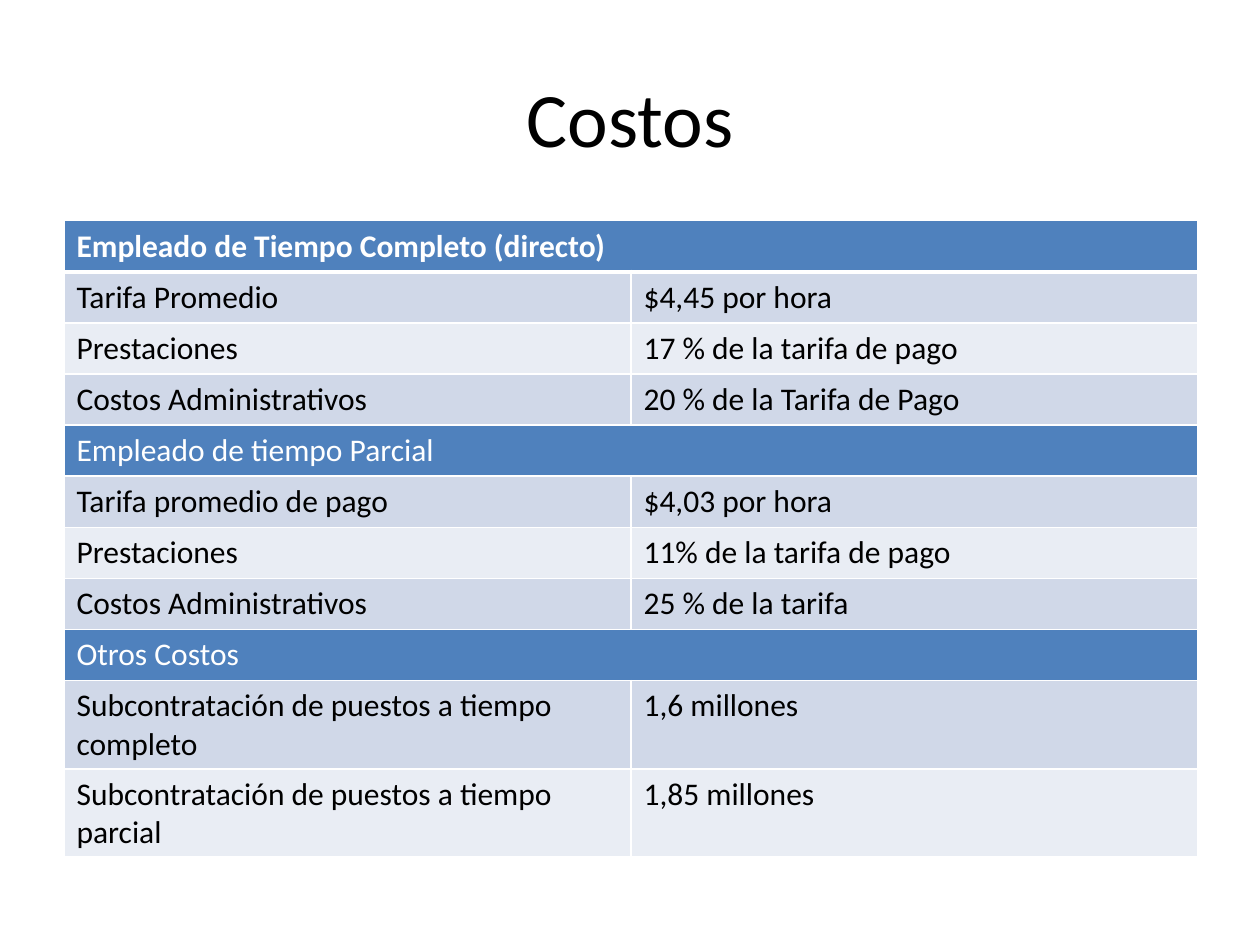
from dataclasses import dataclass

from lxml import etree
from pptx import Presentation
from pptx import util as u
from pptx.dml.color import RGBColor
from pptx.enum import text
from pptx.oxml import ns


@dataclass(frozen=True)
class Theme:
    font: str = "Calibri"
    title_size: int = 44
    cell_size: int = 18
    ink: str = "000000"
    paper: str = "FFFFFF"
    section: str = "4F81BD"
    bands: tuple = ("D0D8E8", "E9EDF4")
    rule: int = 1
    heavy_rule: int = 3


THEME = Theme()

# Each section: heading, then its rows
SECTIONS = [
    ("Empleado de Tiempo Completo (directo)", [
        ("Tarifa Promedio", "$4,45 por hora"),
        ("Prestaciones", "17 % de la tarifa de pago"),
        ("Costos Administrativos", "20 % de la Tarifa de Pago"),
    ]),
    ("Empleado de tiempo Parcial", [
        ("Tarifa promedio de pago", "$4,03 por hora"),
        ("Prestaciones", "11% de la tarifa de pago"),
        ("Costos Administrativos", "25 % de la tarifa"),
    ]),
    ("Otros Costos", [
        ("Subcontratación de puestos a tiempo completo", "1,6 millones"),
        ("Subcontratación de puestos a tiempo parcial", "1,85 millones"),
    ]),
]


def add_run(p, content, size, color, bold=False):
    r = p.add_run()
    r.text = content
    r.font.name = THEME.font
    r.font.size = u.Pt(size)
    r.font.bold = bold
    r.font.color.rgb = RGBColor.from_string(color)


def add_title(s, content):
    sp = s.shapes.add_textbox(u.Cm(1.27), u.Cm(0.76), u.Cm(22.86), u.Cm(3.18))
    tf = sp.text_frame
    tf.word_wrap = True
    tf.vertical_anchor = text.MSO_ANCHOR.MIDDLE
    p = tf.paragraphs[0]
    p.alignment = text.PP_ALIGN.CENTER
    add_run(p, content, THEME.title_size, THEME.ink)


def set_borders(cell, top, bottom):
    tc_pr = cell._tc.get_or_add_tcPr()
    widths = {"lnL": THEME.rule, "lnR": THEME.rule, "lnT": top, "lnB": bottom}
    for side, width in widths.items():
        ln = etree.SubElement(tc_pr, ns.qn(f"a:{side}"), w=str(u.Pt(width)))
        fill = etree.SubElement(ln, ns.qn("a:solidFill"))
        etree.SubElement(fill, ns.qn("a:srgbClr"), val=THEME.paper)


def style_cell(cell, row, fill):
    # The heavy rule lies between the first two rows
    set_borders(cell,
                top=THEME.heavy_rule if row == 1 else THEME.rule,
                bottom=THEME.heavy_rule if row == 0 else THEME.rule)
    cell.fill.solid()
    cell.fill.fore_color.rgb = RGBColor.from_string(fill)


def add_cost_table(s, sections):
    # Flatten the sections into (texts, fill, text colour)
    rows = []
    for heading, items in sections:
        rows.append(((heading,), THEME.section, THEME.paper))
        for i, item in enumerate(items):
            rows.append((item, THEME.bands[i % 2], THEME.ink))

    height = u.Cm(1.03)
    table = s.shapes.add_table(len(rows), 2, u.Cm(1.29), u.Cm(4.45),
                               u.Cm(22.86), height * len(rows)).table
    for i, (texts, fill, color) in enumerate(rows):
        table.rows[i].height = height
        for cell in table.rows[i].cells:
            style_cell(cell, i, fill)
        if len(texts) == 1:
            table.cell(i, 0).merge(table.cell(i, 1))
        for j, content in enumerate(texts):
            p = table.cell(i, j).text_frame.paragraphs[0]
            add_run(p, content, THEME.cell_size, color, bold=i == 0)


def main():
    prs = Presentation()
    prs.slide_width, prs.slide_height = u.Cm(25.4), u.Cm(19.05)
    s = prs.slides.add_slide(prs.slide_layouts[6])
    add_title(s, "Costos")
    add_cost_table(s, SECTIONS)
    prs.save("out.pptx")


if __name__ == "__main__":
    main()
